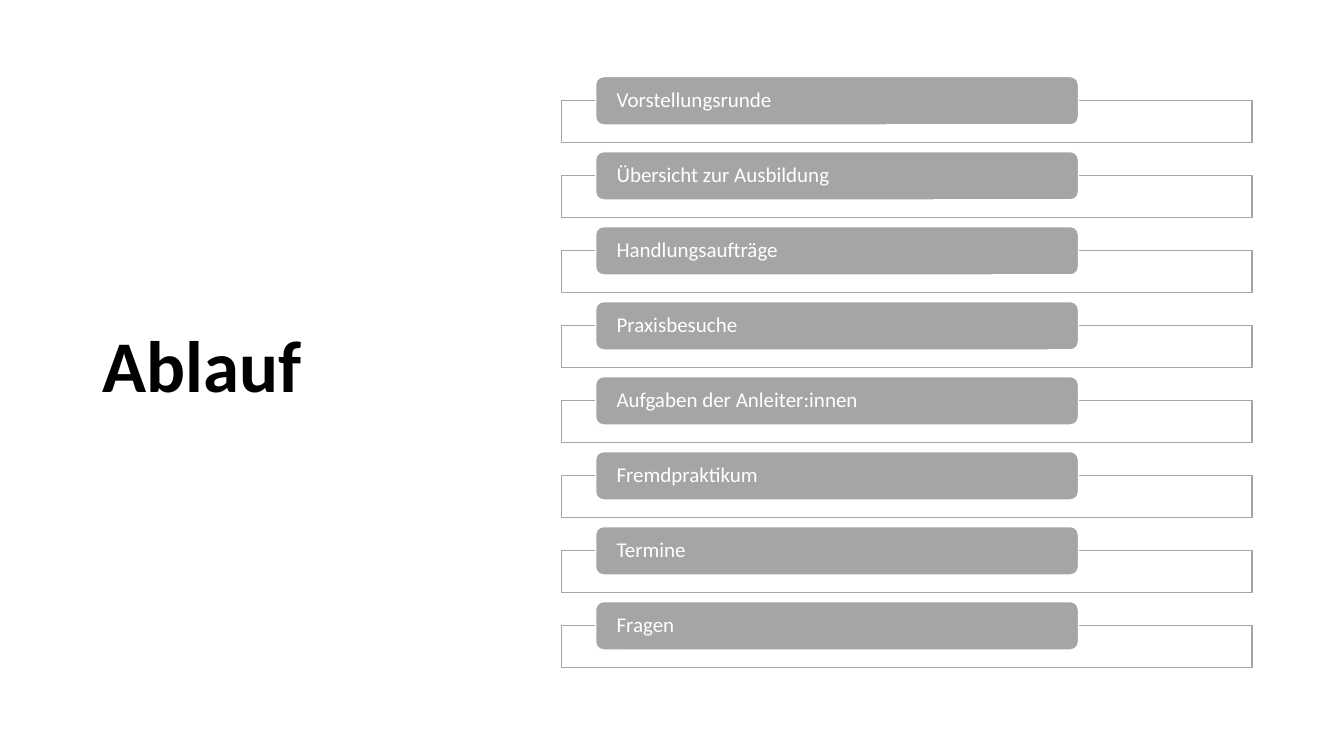
"""Build the agenda slide "Ablauf" with eight topic bars."""
from pptx import Presentation
from pptx.dml.color import RGBColor
from pptx.enum.shapes import MSO_SHAPE
from pptx.enum.text import MSO_ANCHOR, PP_ALIGN
from pptx.util import Cm, Pt

COLORS = {"black": "000000", "white": "FFFFFF", "gray": "A5A5A5"}
TOPICS = [
    "Vorstellungsrunde",
    "Übersicht zur Ausbildung",
    "Handlungsaufträge",
    "Praxisbesuche",
    "Aufgaben der Anleiter:innen",
    "Fremdpraktikum",
    "Termine",
    "Fragen",
]
FIRST_TOP = 1.93
PITCH = 1.89
FRAME_OFFSET = 0.61


def write_text(shape, text, size, color, bold=False, inset=0.25):
    """Put one left-aligned, vertically centred paragraph in a shape."""
    tf = shape.text_frame
    tf.word_wrap = True
    tf.vertical_anchor = MSO_ANCHOR.MIDDLE
    tf.margin_left = tf.margin_right = Cm(inset)
    tf.margin_top = tf.margin_bottom = Cm(0)
    p = tf.paragraphs[0]
    p.alignment = PP_ALIGN.LEFT
    p.line_spacing = 0.9
    r = p.add_run()
    r.text = text
    r.font.name = "Calibri"
    r.font.size = Pt(size)
    r.font.bold = bold
    r.font.color.rgb = RGBColor.from_string(COLORS[color])


def add_box(s, kind, left, top, width, height, fill, line):
    """Add a filled and outlined shape, measured in centimetres."""
    sp = s.shapes.add_shape(kind, Cm(left), Cm(top), Cm(width), Cm(height))
    sp.shadow.inherit = False
    sp.fill.solid()
    sp.fill.fore_color.rgb = RGBColor.from_string(COLORS[fill])
    sp.line.color.rgb = RGBColor.from_string(COLORS[line])
    sp.line.width = Pt(1)
    return sp


prs = Presentation()
prs.slide_width = Cm(33.87)
prs.slide_height = Cm(19.05)
s = prs.slides.add_slide(prs.slide_layouts[6])

title = s.shapes.add_textbox(Cm(2.34), Cm(1.55), Cm(9.37), Cm(15.47))
write_text(title, "Ablauf", size=52, color="black", bold=True)

for i, topic in enumerate(TOPICS):
    top = FIRST_TOP + i * PITCH
    add_box(s, MSO_SHAPE.RECTANGLE, 14.15, top + FRAME_OFFSET, 17.4, 1.05,
            fill="white", line="gray")
    bar = add_box(s, MSO_SHAPE.ROUNDED_RECTANGLE, 15.01, top, 12.17, 1.22,
                  fill="gray", line="white")
    write_text(bar, topic, size=15, color="white", inset=0.47)

prs.save("out.pptx")
